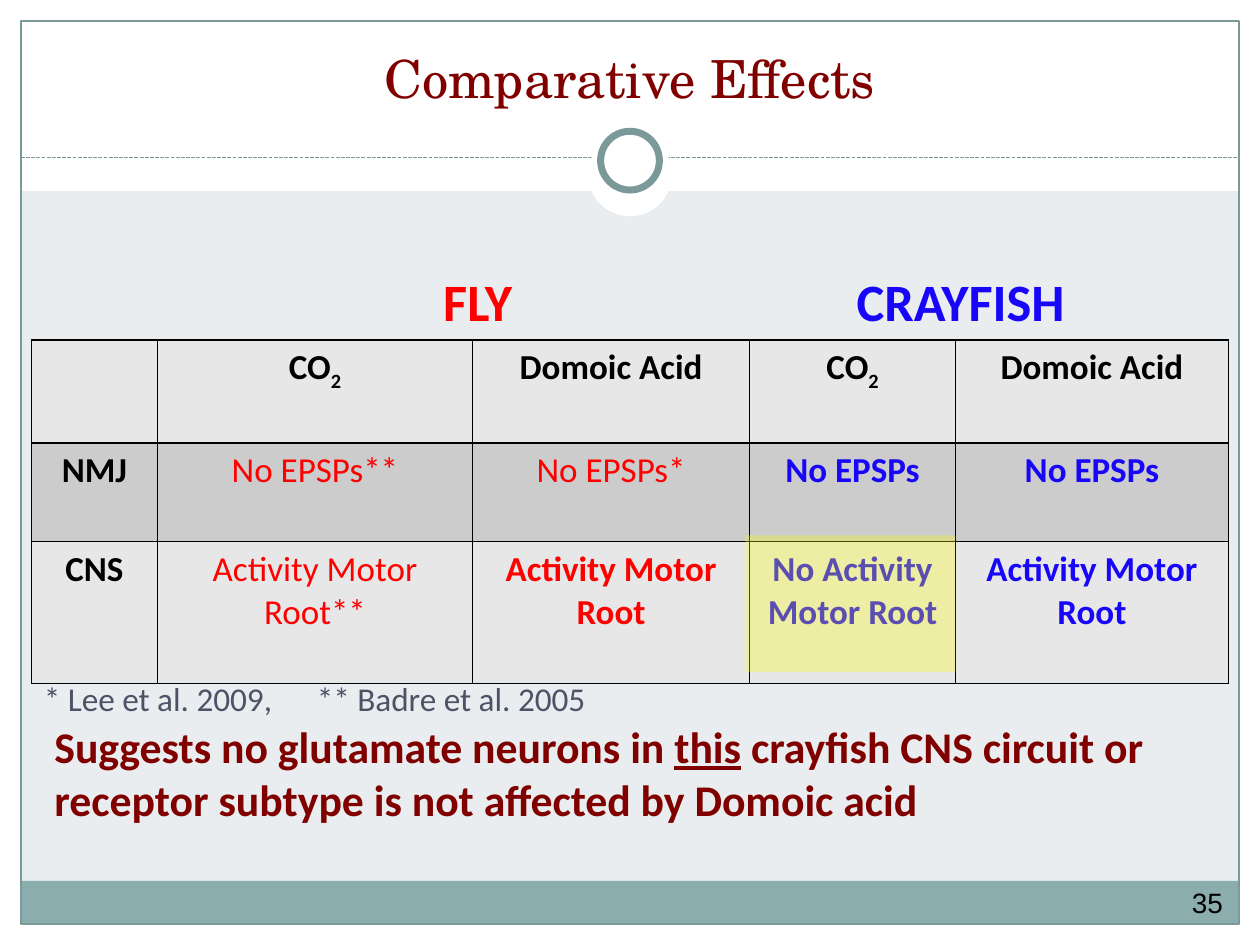
from dataclasses import dataclass
from typing import Optional

from lxml.etree import SubElement
from pptx import Presentation
from pptx.dml.color import RGBColor
from pptx.enum.dml import MSO_LINE
from pptx.enum.shapes import MSO_CONNECTOR, MSO_SHAPE
from pptx.enum.text import MSO_ANCHOR, PP_ALIGN
from pptx.oxml.ns import qn
from pptx.util import Inches, Pt

WHITE = RGBColor(0xFF, 0xFF, 0xFF)
BLACK = RGBColor(0, 0, 0)
PALE = RGBColor(0xE9, 0xED, 0xEF)
BAND = RGBColor(0x8C, 0xAD, 0xAE)
TEAL = RGBColor(0x7C, 0x99, 0x9A)
MAROON = RGBColor(0x80, 0, 0)
RED = RGBColor(0xFF, 0, 0)
BLUE = RGBColor(0x17, 0x06, 0xF8)
SLATE = RGBColor(0x4D, 0x53, 0x67)
YELLOW = RGBColor(0xFF, 0xFF, 0)
LIGHT_ROW = RGBColor(0xE7, 0xE7, 0xE7)
DARK_ROW = RGBColor(0xCC, 0xCC, 0xCC)

COLUMNS, ROWS = 120, 90
WIDTH, HEIGHT = Inches(10), Inches(7.5)


@dataclass
class Area:
    column: float
    row: float
    columns: float
    rows: float

    def lengths(self) -> tuple:
        return (across(self.column), down(self.row),
                across(self.columns), down(self.rows))


@dataclass
class Panel:
    area: Area
    fill: Optional[RGBColor] = WHITE
    line: Optional[RGBColor] = None
    weight: float = 0.75
    kind: MSO_SHAPE = MSO_SHAPE.RECTANGLE


@dataclass
class Label:
    area: Area
    spans: list
    size: float
    color: RGBColor
    bold: bool = False
    name: str = "Calibri"
    align: PP_ALIGN = PP_ALIGN.CENTER
    anchor: MSO_ANCHOR = MSO_ANCHOR.TOP
    inset: float = 0.1
    tab: float = 0


@dataclass
class Entry:
    text: str
    color: RGBColor = BLACK
    bold: bool = True
    subscript: str = ""


def across(columns: float) -> int:
    return round(WIDTH * columns / COLUMNS)


def down(rows: float) -> int:
    return round(HEIGHT * rows / ROWS)


def set_font(paragraph, name: str, size: float, color: RGBColor, bold: bool) -> None:
    font = paragraph.font
    font.name, font.size, font.bold = name, Pt(size), bold
    font.color.rgb = color


def draw_panel(page, panel: Panel):
    shape = page.shapes.add_shape(panel.kind, *panel.area.lengths())
    shape.shadow.inherit = False
    if panel.fill is None:
        shape.fill.background()
    else:
        shape.fill.solid()
        shape.fill.fore_color.rgb = panel.fill
    if panel.line is None:
        shape.line.fill.background()
    else:
        shape.line.color.rgb = panel.line
        shape.line.width = Pt(panel.weight)
    return shape


def draw_divider(page) -> None:
    line = page.shapes.add_connector(
        MSO_CONNECTOR.STRAIGHT, across(2), down(15), across(118), down(15))
    line.line.color.rgb = TEAL
    line.line.width = Pt(0.75)
    line.line.dash_style = MSO_LINE.SQUARE_DOT
    properties = line._element.spPr
    properties.find(qn("a:ln")).find(qn("a:prstDash")).set("val", "sysDash")
    SubElement(properties, qn("a:effectLst"))


def draw_label(page, label: Label) -> None:
    box = page.shapes.add_textbox(*label.area.lengths())
    frame = box.text_frame
    frame.word_wrap = True
    frame.vertical_anchor = label.anchor
    frame.margin_left = frame.margin_right = Inches(label.inset)
    para = frame.paragraphs[0]
    para.alignment = label.align
    if label.tab:
        tabs = SubElement(para._p.get_or_add_pPr(), qn("a:tabLst"))
        SubElement(tabs, qn("a:tab"), pos=str(across(label.tab)), algn="l")
    set_font(para, label.name, label.size, label.color, label.bold)
    for text, underlined in label.spans:
        span = para.add_run()
        span.text = text
        if underlined:
            span.font.underline = True


def draw_cell(cell, entry: Entry, fill: RGBColor) -> None:
    cell.fill.solid()
    cell.fill.fore_color.rgb = fill
    para = cell.text_frame.paragraphs[0]
    para.alignment = PP_ALIGN.CENTER
    set_font(para, "Calibri", 20, entry.color, entry.bold)
    if entry.text:
        para.add_run().text = entry.text
    if entry.subscript:
        span = para.add_run()
        span.text = entry.subscript
        span._r.get_or_add_rPr().set("baseline", "-25000")
    properties = cell._tc.get_or_add_tcPr()
    for place, side in enumerate(("lnL", "lnR", "lnT", "lnB")):
        border = SubElement(properties, qn(f"a:{side}"), w=str(Pt(1)))
        solid = SubElement(border, qn("a:solidFill"))
        SubElement(solid, qn("a:srgbClr"), val=str(BLACK))
        properties.insert(place, border)


def draw_table(page, area: Area, widths: list, heights: list, entries: list) -> None:
    table = page.shapes.add_table(len(heights), len(widths), *area.lengths()).table
    for column, width in zip(table.columns, widths):
        column.width = across(width)
    for number, (row, height) in enumerate(zip(table.rows, heights)):
        row.height = down(height)
        fill = DARK_ROW if number % 2 else LIGHT_ROW
        for cell, entry in zip(row.cells, entries[number]):
            draw_cell(cell, entry, fill)


PANELS = [
    Panel(Area(0, 88, 120, 2)),
    Panel(Area(0, 0, 120, 18.2)),
    Panel(Area(0, 0, 2, 90)),
    Panel(Area(118, 0, 2, 90)),
    Panel(Area(2, 83.9, 116, 4.1), BAND),
    Panel(Area(2, 2, 116, 86), None, TEAL),
]
RINGS = [
    Panel(Area(56, 12.6, 8, 8), kind=MSO_SHAPE.OVAL),
    Panel(Area(57.2, 12.5, 5.6, 5.6), WHITE, TEAL, 4, MSO_SHAPE.OVAL),
]
CO2 = Entry("CO", subscript="2")
DOMOIC = Entry("Domoic Acid")
ENTRIES = [
    [Entry(""), CO2, DOMOIC, CO2, DOMOIC],
    [Entry("NMJ"), Entry("No EPSPs**", RED, False), Entry("No EPSPs*", RED, False),
     Entry("No EPSPs", BLUE), Entry("No EPSPs", BLUE)],
    [Entry("CNS"), Entry("Activity Motor Root**", RED, False),
     Entry("Activity Motor Root", RED), Entry("No Activity Motor Root", BLUE),
     Entry("Activity Motor Root", BLUE)],
]
LABELS = [
    Label(Area(4, 1, 112, 10), [("Comparative Effects", False)], 30, MAROON,
          name="TeX Gyre Schola", anchor=MSO_ANCHOR.BOTTOM),
    Label(Area(112, 83, 6, 5.8), [("35", False)], 16, BLACK, name="Arial",
          anchor=MSO_ANCHOR.MIDDLE, inset=0.05),
    Label(Area(39, 25, 13, 7.3), [("FLY", False)], 30, RED, True),
    Label(Area(78, 25, 27, 7.3), [("CRAYFISH", False)], 30, BLUE, True),
    Label(Area(3, 64, 78, 5), [("* Lee et al. 2009,\t** Badre et al. 2005", False)],
          19, SLATE, align=PP_ALIGN.LEFT, tab=26),
]
CONCLUSION = Label(
    Area(4, 68, 113, 11.2),
    [("Suggests no glutamate neurons in ", False), ("this", True),
     (" crayfish CNS circuit or receptor subtype is not affected by Domoic acid", False)],
    25, MAROON, True, align=PP_ALIGN.LEFT)


def main() -> None:
    deck = Presentation()
    deck.slide_width, deck.slide_height = WIDTH, HEIGHT
    page = deck.slides.add_slide(deck.slide_layouts[6])
    page.background.fill.solid()
    page.background.fill.fore_color.rgb = PALE
    for panel in PANELS:
        draw_panel(page, panel)
    draw_divider(page)
    for ring in RINGS:
        draw_panel(page, ring)
    draw_table(page, Area(3, 32.4, 114, 32.7), [12, 30, 26.4, 19.6, 26],
               [9.8, 9.4, 13.5], ENTRIES)
    for label in LABELS:
        draw_label(page, label)
    highlight = draw_panel(page, Panel(Area(71, 51, 20, 13), YELLOW))
    color = highlight._element.spPr.find(qn("a:solidFill")).find(qn("a:srgbClr"))
    SubElement(color, qn("a:alpha"), val="29000")
    draw_label(page, CONCLUSION)
    deck.save("out.pptx")


if __name__ == "__main__":
    main()
